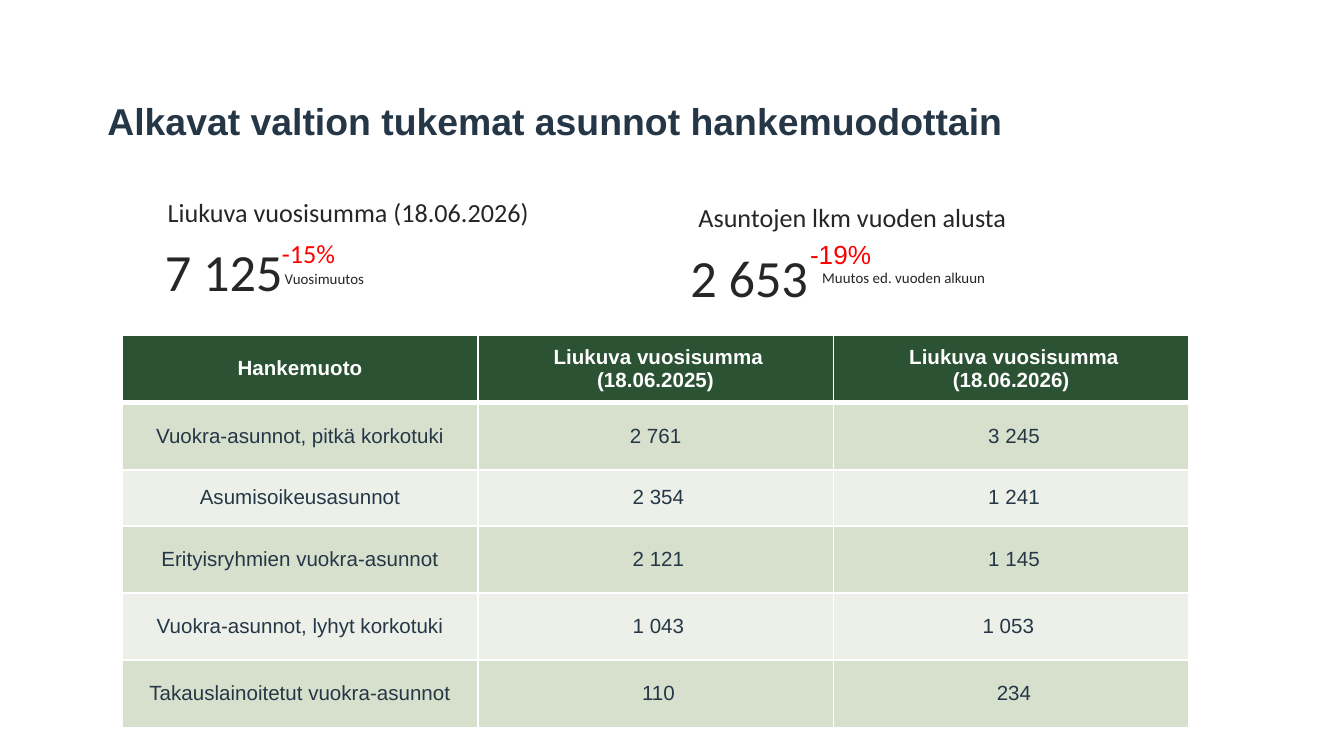
from typing import NamedTuple

import pptx
import pptx.dml.color
import pptx.enum.text
import pptx.oxml
import pptx.oxml.ns
import pptx.slide
import pptx.table
import pptx.text.text
import pptx.util
from pptx.dml.color import RGBColor
from pptx.enum.text import MSO_ANCHOR, MSO_AUTO_SIZE, PP_ALIGN
from pptx.util import Cm

NAVY = RGBColor(0x25, 0x37, 0x46)
CHARCOAL = RGBColor(0x26, 0x26, 0x26)
RED = RGBColor(0xFF, 0x00, 0x00)
WHITE = RGBColor(0xFF, 0xFF, 0xFF)
DARK_GREEN = RGBColor(0x2C, 0x52, 0x34)
BAND_GREENS = (RGBColor(0xD7, 0xE0, 0xCD), RGBColor(0xEC, 0xF0, 0xE8))


class Style(NamedTuple):
    size: int
    color: RGBColor
    font: str = "Calibri"
    bold: bool = False
    align: PP_ALIGN = PP_ALIGN.LEFT


class Label(NamedTuple):
    """A text box; lengths are in centimetres."""
    text: str
    left: float
    top: float
    width: float
    height: float
    style: Style
    anchor: MSO_ANCHOR = MSO_ANCHOR.TOP
    grows: bool = True


TITLE = Style(20, NAVY, "Arial", bold=True)
HEADING = Style(14, CHARCOAL)
FIGURE = Style(28, CHARCOAL, align=PP_ALIGN.RIGHT)
CHANGE = Style(14, RED)
NOTE = Style(8, CHARCOAL)
TABLE_HEAD = Style(11, WHITE, "Arial", bold=True, align=PP_ALIGN.CENTER)
TABLE_BODY = Style(11, NAVY, "Arial", align=PP_ALIGN.CENTER)

LABELS = (
    Label("Alkavat valtion tukemat asunnot hankemuodottain",
          1.78, 1.8, 21.87, 0.97, TITLE, MSO_ANCHOR.MIDDLE, grows=False),
    Label("7 125", 0, 4.39, 5.59, 1.45, FIGURE, MSO_ANCHOR.BOTTOM),
    Label("-15%", 5.08, 4.37, 4.14, 0.84, CHANGE, MSO_ANCHOR.BOTTOM),
    Label("2 653", 10.31, 4.5, 5.21, 1.45, FIGURE, MSO_ANCHOR.BOTTOM),
    Label("-19%", 15.06, 4.39, 3.73, 0.84, CHANGE._replace(font="Arial"), MSO_ANCHOR.BOTTOM),
    Label("Liukuva vuosisumma (18.06.2026)", 2.92, 3.58, 8.18, 0.84, HEADING),
    Label("Asuntojen lkm vuoden alusta", 12.95, 3.68, 6.4, 0.86, HEADING),
    Label("Vuosimuutos", 5.13, 4.98, 3.2, 0.61, NOTE),
    Label("Muutos ed. vuoden alkuun", 15.29, 4.95, 6.55, 0.61, NOTE),
)

TABLE_ROWS = (
    ("Hankemuoto", " Liukuva vuosisumma (18.06.2025)", " Liukuva vuosisumma (18.06.2026)"),
    ("Vuokra-asunnot, pitkä korkotuki", " 2 761 ", " 3 245"),
    ("Asumisoikeusasunnot", " 2 354", " 1 241"),
    ("Erityisryhmien vuokra-asunnot", " 2 121", " 1 145"),
    ("Vuokra-asunnot, lyhyt korkotuki", " 1 043", "1 053 "),
    ("Takauslainoitetut vuokra-asunnot", " 110", " 234"),
)
ROW_HEIGHTS = (1.27, 1.28, 1.06, 1.27, 1.27, 1.27)
COLUMN_WIDTH = 6.72


def write(frame: pptx.text.text.TextFrame, text: str, style: Style) -> None:
    paragraph = frame.paragraphs[0]
    paragraph.alignment = style.align
    run = paragraph.add_run()
    run.text = text
    run.font.name = style.font
    run.font.size = pptx.util.Pt(style.size)
    run.font.bold = style.bold
    run.font.color.rgb = style.color


def add_label(slide: pptx.slide.Slide, label: Label) -> None:
    box = slide.shapes.add_textbox(
        Cm(label.left), Cm(label.top), Cm(label.width), Cm(label.height))
    frame = box.text_frame
    frame.word_wrap = True
    frame.auto_size = MSO_AUTO_SIZE.SHAPE_TO_FIT_TEXT if label.grows else MSO_AUTO_SIZE.NONE
    frame.vertical_anchor = label.anchor
    write(frame, label.text, label.style)


def set_borders(cell: pptx.table._Cell, top: int, bottom: int) -> None:
    """Draw white cell borders; top and bottom widths are in points."""
    properties = cell._tc.get_or_add_tcPr()
    sides = (("lnL", 1), ("lnR", 1), ("lnT", top), ("lnB", bottom))
    for position, (side, width) in enumerate(sides):
        properties.insert(position, pptx.oxml.parse_xml(
            f'<a:{side} {pptx.oxml.ns.nsdecls("a")} w="{pptx.util.Pt(width)}">'
            f'<a:solidFill><a:srgbClr val="{WHITE}"/></a:solidFill></a:{side}>'))


def add_project_table(slide: pptx.slide.Slide) -> None:
    column_count = len(TABLE_ROWS[0])
    table = slide.shapes.add_table(
        len(TABLE_ROWS), column_count, Cm(2.31), Cm(6.33),
        Cm(COLUMN_WIDTH * column_count), Cm(sum(ROW_HEIGHTS))).table
    for column in table.columns:
        column.width = Cm(COLUMN_WIDTH)
    for row_index, (texts, height) in enumerate(zip(TABLE_ROWS, ROW_HEIGHTS)):
        table.rows[row_index].height = Cm(height)
        is_head = row_index == 0
        for column_index, text in enumerate(texts):
            cell = table.cell(row_index, column_index)
            cell.vertical_anchor = MSO_ANCHOR.MIDDLE
            cell.fill.solid()
            cell.fill.fore_color.rgb = DARK_GREEN if is_head else BAND_GREENS[(row_index - 1) % 2]
            set_borders(cell, top=3 if row_index == 1 else 1, bottom=3 if is_head else 1)
            write(cell.text_frame, text, TABLE_HEAD if is_head else TABLE_BODY)


def main() -> None:
    presentation = pptx.Presentation()
    presentation.slide_width = Cm(25.4)
    presentation.slide_height = Cm(14.29)
    slide = presentation.slides.add_slide(presentation.slide_layouts[6])
    for label in LABELS:
        add_label(slide, label)
    add_project_table(slide)
    presentation.save("out.pptx")


if __name__ == "__main__":
    main()
